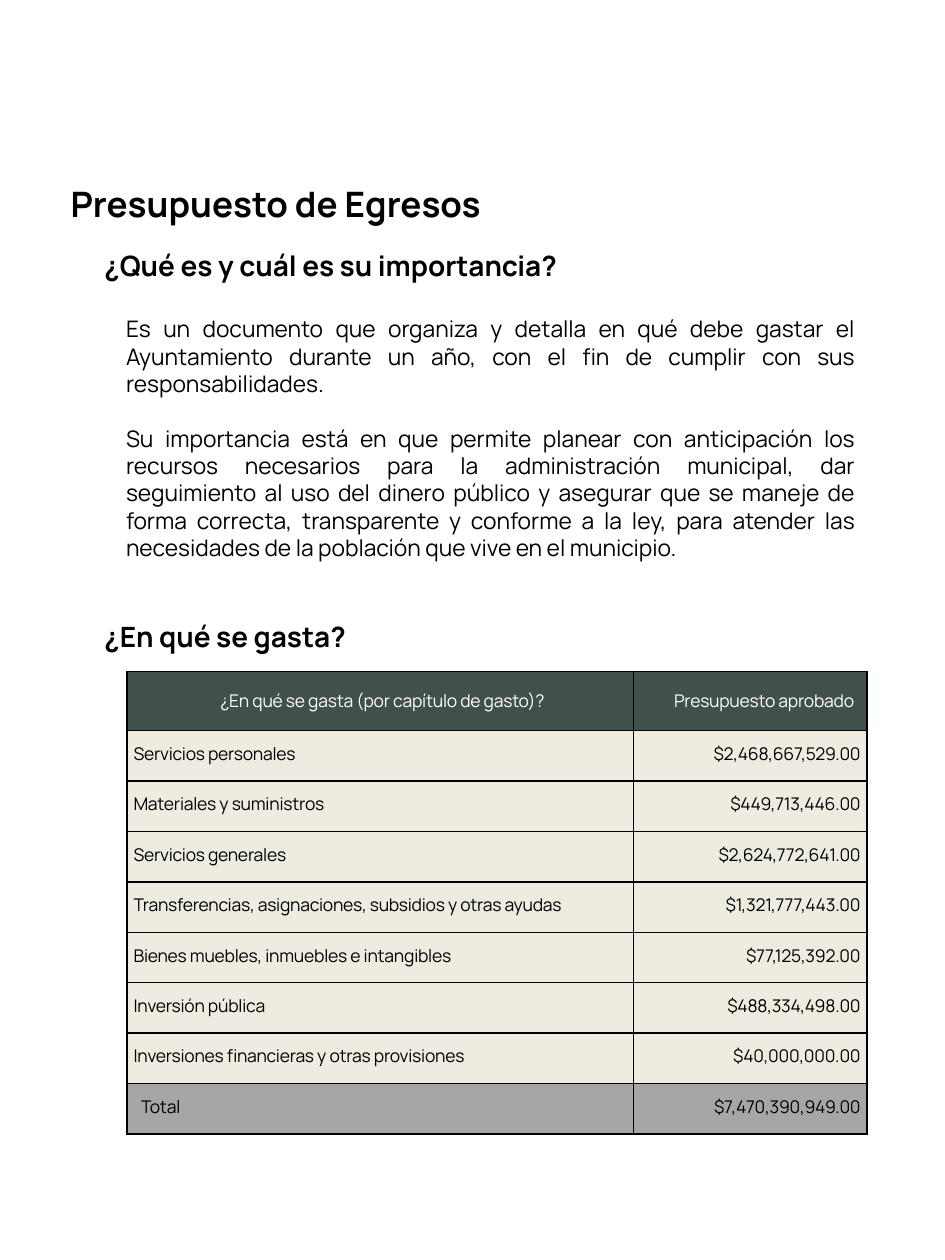
from dataclasses import dataclass

import pptx
import pptx.dml.color
import pptx.enum.text
import pptx.oxml
import pptx.oxml.ns
import pptx.util

COLORS = {"text": "000000", "header": "41504D", "header_text": "FFFFFF",
          "row": "EEECE1", "total": "A6A6A6", "border": "000000"}
FONT = "Manrope"
ALIGN = pptx.enum.text.PP_ALIGN
LINE_HEIGHT = pptx.util.Pt(11.1)
CELL_INSET = pptx.util.Inches(0.05)
GRID_COLUMNS, GRID_ROWS = 75, 100


@dataclass
class Box:
    """A place on the slide, in grid columns and rows."""
    column: float
    row: float
    columns: float
    rows: float


@dataclass
class CellStyle:
    fill: str
    color: str = "text"
    align: ALIGN = ALIGN.LEFT
    indent: float = 0
    header: bool = False


presentation = pptx.Presentation()
presentation.slide_width = pptx.util.Inches(7.5)
presentation.slide_height = pptx.util.Inches(10)
COLUMN = presentation.slide_width / GRID_COLUMNS
ROW = presentation.slide_height / GRID_ROWS


def place(box: Box) -> tuple[int, int, int, int]:
    return (int(box.column * COLUMN), int(box.row * ROW),
            int(box.columns * COLUMN), int(box.rows * ROW))


def color(name: str) -> pptx.dml.color.RGBColor:
    return pptx.dml.color.RGBColor.from_string(COLORS[name])


def set_font(paragraph, size: float, bold: bool = False, name: str = "text") -> None:
    font = paragraph.font
    font.name, font.size, font.bold = FONT, pptx.util.Pt(size), bold
    font.color.rgb = color(name)


def write_text(shape, box: Box, texts: list[str], size: float, bold: bool = False,
               align: ALIGN = ALIGN.LEFT, gap: float = 0) -> None:
    """Place a text shape and fill it with unbulleted paragraphs."""
    shape.left, shape.top, shape.width, shape.height = place(box)
    frame = shape.text_frame
    frame.word_wrap = True
    frame.auto_size = pptx.enum.text.MSO_AUTO_SIZE.SHAPE_TO_FIT_TEXT
    frame.vertical_anchor = pptx.enum.text.MSO_ANCHOR.TOP
    frame.text = "\n".join(texts)
    for index, paragraph in enumerate(frame.paragraphs):
        properties = paragraph._p.get_or_add_pPr()
        properties.set("marL", "0")
        properties.set("indent", "0")
        pptx.oxml.ns.qn("a:buNone")
        properties.append(pptx.oxml.parse_xml(
            f'<a:buNone {pptx.oxml.ns.nsdecls("a")}/>'))
        paragraph.alignment = align
        paragraph.space_before = pptx.util.Pt(gap if index else 0)
        set_font(paragraph, size, bold)


def write_cell(cell, text: str, style: CellStyle) -> None:
    cell.fill.solid()
    cell.fill.fore_color.rgb = color(style.fill)
    cell.vertical_anchor = pptx.enum.text.MSO_ANCHOR.MIDDLE
    cell.margin_left = cell.margin_right = CELL_INSET
    cell.margin_top = cell.margin_bottom = CELL_INSET
    cell.text = text
    paragraph = cell.text_frame.paragraphs[0]
    paragraph.alignment = style.align
    properties = paragraph._p.get_or_add_pPr()
    properties.set("marL", str(pptx.util.Inches(style.indent)))
    if not style.header:
        paragraph.line_spacing = LINE_HEIGHT
    set_font(paragraph, 10, name=style.color)
    paragraph.runs[0]._r.get_or_add_rPr().set("spc", "-10")
    # Borders come before the fill in the cell properties
    cell_properties = cell._tc.get_or_add_tcPr()
    for index, side in enumerate(("lnL", "lnR", "lnT", "lnB")):
        cell_properties.insert(index, pptx.oxml.parse_xml(
            f'<a:{side} {pptx.oxml.ns.nsdecls("a")} w="{pptx.util.Pt(1)}"><a:solidFill>'
            f'<a:srgbClr val="{COLORS["border"]}"/></a:solidFill></a:{side}>'))


slide = presentation.slides.add_slide(presentation.slide_layouts[1])
title, body = slide.placeholders

# Title and section headings
write_text(title, Box(4.6, 14, 61.5, 4.4), ["Presupuesto de Egresos"], 20, bold=True)
for row, heading in ((19.2, "¿Qué es y cuál es su importancia?"),
                     (48.7, "¿En qué se gasta?")):
    box = Box(7.3, row, 61.5, 3.7)
    write_text(slide.shapes.add_textbox(*place(box)), box, [heading], 16, bold=True)

# Explanation
write_text(body, Box(9, 24.5, 59.8, 22.9), [
    "Es un documento que organiza y detalla en qué debe gastar el Ayuntamiento "
    "durante un año, con el fin de cumplir con sus responsabilidades.",
    "Su importancia está en que permite planear con anticipación los recursos "
    "necesarios para la administración municipal, dar seguimiento al uso del dinero "
    "público y asegurar que se maneje de forma correcta, transparente y conforme a "
    "la ley, para atender las necesidades de la población que vive en el municipio.",
], 13, align=ALIGN.JUSTIFY, gap=15.6)

# Spending table
SPENDING = [
    ("¿En qué se gasta (por capítulo de gasto)?", "Presupuesto aprobado"),
    ("Servicios personales", "$2,468,667,529.00"),
    ("Materiales y suministros", "$449,713,446.00"),
    ("Servicios generales", "$2,624,772,641.00"),
    ("Transferencias, asignaciones, subsidios y otras ayudas", "$1,321,777,443.00"),
    ("Bienes muebles, inmuebles e intangibles", "$77,125,392.00"),
    ("Inversión pública", "$488,334,498.00"),
    ("Inversiones financieras y otras provisiones", "$40,000,000.00"),
    ("Total", "$7,470,390,949.00"),
]
HEADER_STYLES = (CellStyle("header", "header_text", ALIGN.CENTER, 0.03, True),
                 CellStyle("header", "header_text", indent=0.27, header=True))
ROW_STYLES = (CellStyle("row"), CellStyle("row", align=ALIGN.RIGHT))
TOTAL_STYLES = (CellStyle("total", indent=0.06), CellStyle("total", align=ALIGN.RIGHT))
styles = [HEADER_STYLES] + [ROW_STYLES] * (len(SPENDING) - 2) + [TOTAL_STYLES]

table = slide.shapes.add_table(
    len(SPENDING), 2, *place(Box(10.1, 53.3, 58.7, 36.6))).table
for column, width in zip(table.columns, (40.2, 18.5)):
    column.width = int(width * COLUMN)
for index, (texts, row_styles) in enumerate(zip(SPENDING, styles)):
    table.rows[index].height = int((4 if index else 4.7) * ROW)
    for cell, text, style in zip(table.rows[index].cells, texts, row_styles):
        write_cell(cell, text, style)

presentation.save("out.pptx")
